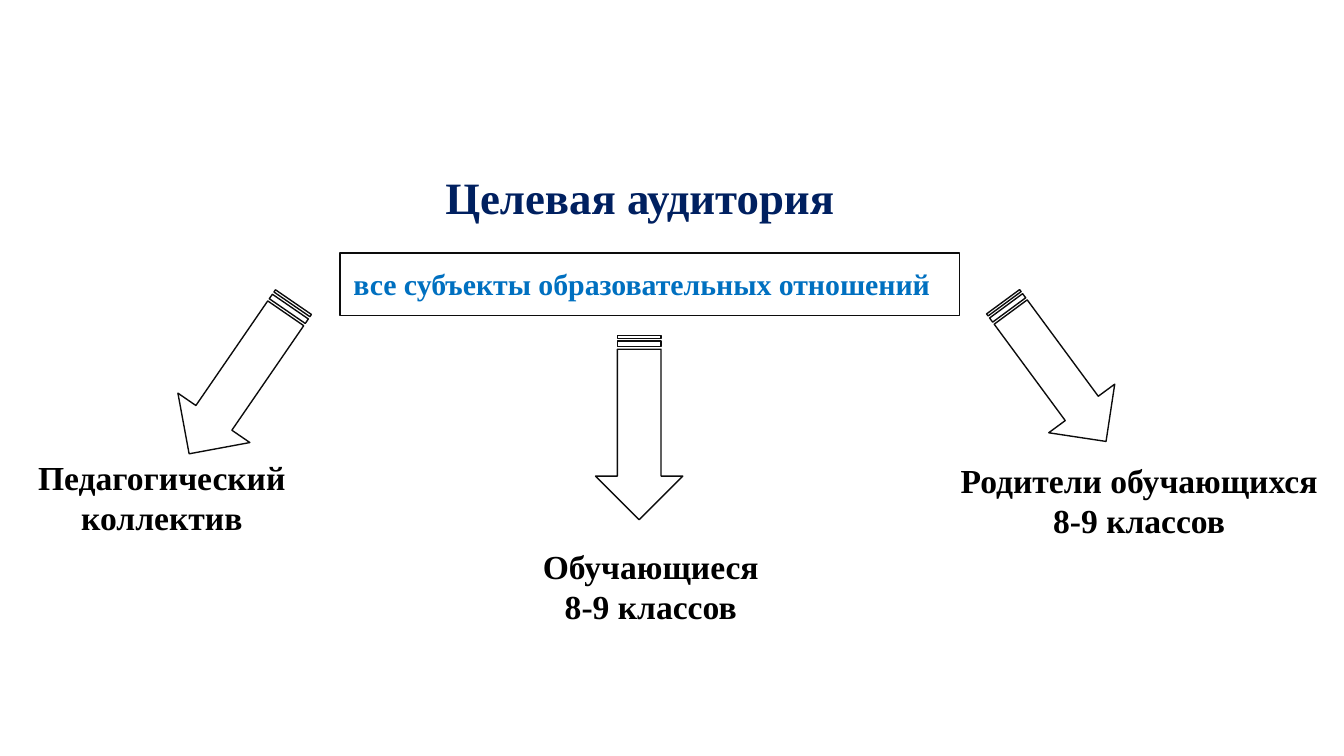
from pptx import Presentation
from pptx.dml.color import RGBColor
from pptx.enum.shapes import MSO_SHAPE as Shape
from pptx.enum.text import MSO_ANCHOR as Anchor, PP_ALIGN as Align
from pptx.util import Cm, Pt

FONT = "Times New Roman"
NAVY, BLUE, BLACK, OUTLINE = "002060", "0070C0", "000000", "0C0C0C"

# Each audience: arrow box, arrow rotation, label box, label lines (cm, degrees)
AUDIENCES = [
    ((2.82, 6.32, 3.48, 1.65), 124.5, (-0.99, 8.51, 8.1, 1.8),
     ["Педагогический коллектив"]),
    ((10.34, 7.26, 3.48, 1.65), 90, (8.86, 10.19, 6.88, 2.57),
     ["Обучающиеся", "8-9 классов"]),
    ((18.29, 6.25, 3.28, 1.55), 53.6, (17.48, 8.56, 8.1, 1.8),
     ["Родители обучающихся", "8-9 классов"]),
]


def color(value):
    return RGBColor.from_string(value)


def lengths(box):
    return [Cm(value) for value in box]


def write_text(shape, lines, size, text_color, align=Align.CENTER, margin=0.25):
    """Fill a shape with bold lines; margin is the top and bottom inset in cm."""
    frame = shape.text_frame
    frame_format = {
        "word_wrap": True, "vertical_anchor": Anchor.TOP,
        "margin_left": Cm(0.25), "margin_right": Cm(0.25),
        "margin_top": Cm(margin), "margin_bottom": Cm(margin),
    }
    for name, value in frame_format.items():
        setattr(frame, name, value)
    font_format = {"name": FONT, "size": Pt(size), "bold": True}
    for index, line in enumerate(lines):
        paragraph = frame.add_paragraph() if index else frame.paragraphs[0]
        paragraph.alignment = align
        run = paragraph.add_run()
        run.text = line
        for name, value in font_format.items():
            setattr(run.font, name, value)
        run.font.color.rgb = color(text_color)


def add_outlined_shape(slide, kind, box):
    shape = slide.shapes.add_shape(kind, *lengths(box))
    shape.shadow.inherit = False
    shape.fill.background()
    shape.line.color.rgb = color(OUTLINE)
    shape.line.width = Pt(0.75)
    return shape


def add_title(slide, box):
    title = slide.shapes.add_textbox(*lengths(box))
    write_text(title, ["Целевая аудитория"], 24, NAVY)


def add_summary(slide, box):
    summary = add_outlined_shape(slide, Shape.RECTANGLE, box)
    write_text(summary, ["все субъекты образовательных отношений"], 16, BLUE,
               Align.LEFT)


def add_arrow(slide, box, rotation):
    arrow = add_outlined_shape(slide, Shape.STRIPED_RIGHT_ARROW, box)
    arrow.rotation = rotation


def add_label(slide, box, lines):
    label = slide.shapes.add_textbox(*lengths(box))
    write_text(label, lines, 18, BLACK, margin=0.13)


def main():
    presentation = Presentation()
    presentation.slide_width, presentation.slide_height = Cm(25.4), Cm(14.29)
    slide = presentation.slides.add_slide(presentation.slide_layouts[6])
    add_title(slide, (0.43, 2.95, 23.32, 1.55))
    add_summary(slide, (6.43, 4.78, 11.71, 1.19))
    for arrow_box, rotation, _, _ in AUDIENCES:
        add_arrow(slide, arrow_box, rotation)
    for _, _, label_box, lines in AUDIENCES:
        add_label(slide, label_box, lines)
    presentation.save("out.pptx")


if __name__ == "__main__":
    main()
